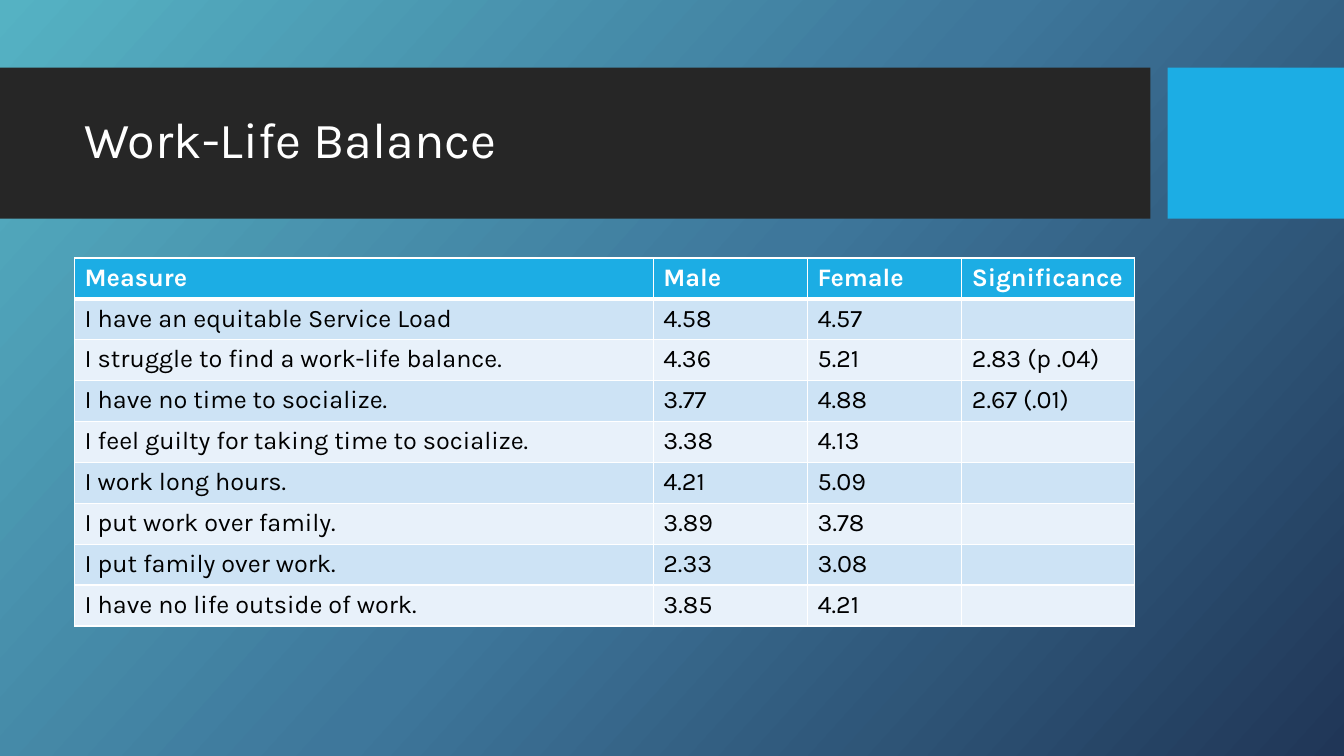
from copy import deepcopy

from lxml import etree
from pptx import Presentation
from pptx.dml.color import RGBColor
from pptx.enum.shapes import MSO_SHAPE
from pptx.enum.text import MSO_ANCHOR
from pptx.oxml.ns import qn
from pptx.util import Inches, Pt

COLORS = {
    "white": "FFFFFF",
    "black": "000000",
    "banner": "262626",
    "accent": "1CADE4",
    "band_dark": "CDE3F5",
    "band_light": "E8F1FA",
}
BACKGROUND_STOPS = [(0, "55B2C3"), (0.5, "3E779B"), (1, "203657")]
FONT = "Karla"
COLUMN_WIDTHS = [5.74, 1.53, 1.53, 1.71]
TABLE_HEIGHT = 3.65
ROWS = [
    ("Measure", "Male", "Female", "Significance"),
    ("I have an equitable Service Load", "4.58", "4.57", ""),
    ("I struggle to find a work-life balance.", "4.36", "5.21", "2.83 (p .04)"),
    ("I have no time to socialize.", "3.77", "4.88", "2.67 (.01)"),
    ("I feel guilty for taking time to socialize.", "3.38", "4.13", ""),
    ("I work long hours.", "4.21", "5.09", ""),
    ("I put work over family.", "3.89", "3.78", ""),
    ("I put family over work.", "2.33", "3.08", ""),
    ("I have no life outside of work.", "3.85", "4.21", ""),
]


def add_run(paragraph, text, size, color, bold=False):
    run = paragraph.add_run()
    run.text = text
    run.font.name = FONT
    run.font.size = Pt(size)
    run.font.bold = bold
    run.font.color.rgb = RGBColor.from_string(COLORS[color])


def add_border(cell, side, width):
    line = etree.SubElement(cell._tc.get_or_add_tcPr(), qn(f"a:ln{side}"), w=str(Pt(width)))
    fill = etree.SubElement(line, qn("a:solidFill"))
    etree.SubElement(fill, qn("a:srgbClr"), val=COLORS["white"])


presentation = Presentation()
presentation.slide_width = Inches(13.33)
presentation.slide_height = Inches(7.5)
slide = presentation.slides.add_slide(presentation.slide_layouts[6])

# Diagonal gradient background
background = slide.background.fill
background.gradient()
background.gradient_angle = 360 - 42
stop_list = slide.element.find(".//" + qn("a:gsLst"))
stop_list.append(deepcopy(stop_list[0]))
for stop, (position, color) in zip(background.gradient_stops, BACKGROUND_STOPS):
    stop.position = position
    stop.color.rgb = RGBColor.from_string(color)

# Banner and accent block
for left, width, color in [(0, 11.41, "banner"), (11.58, 1.75, "accent")]:
    shape = slide.shapes.add_shape(
        MSO_SHAPE.RECTANGLE, Inches(left), Inches(0.67), Inches(width), Inches(1.5))
    shape.shadow.inherit = False
    shape.fill.solid()
    shape.fill.fore_color.rgb = RGBColor.from_string(COLORS[color])
    shape.line.fill.background()

# Title
title = slide.shapes.add_textbox(Inches(0.74), Inches(0.82), Inches(10.51), Inches(1.18))
title.text_frame.word_wrap = True
title.text_frame.vertical_anchor = MSO_ANCHOR.MIDDLE
title_paragraph = title.text_frame.paragraphs[0]
title_paragraph.line_spacing = 0.9
add_run(title_paragraph, "Work-Life Balance", 36, "white")

# Table of survey means
table = slide.shapes.add_table(
    len(ROWS), len(COLUMN_WIDTHS), Inches(0.74), Inches(2.56),
    Inches(sum(COLUMN_WIDTHS)), Inches(TABLE_HEIGHT)).table
for column, width in zip(table.columns, COLUMN_WIDTHS):
    column.width = Inches(width)

for row_index, values in enumerate(ROWS):
    is_header = row_index == 0
    if is_header:
        fill_color = "accent"
    else:
        fill_color = "band_dark" if row_index % 2 else "band_light"
    for column_index, value in enumerate(values):
        cell = table.cell(row_index, column_index)
        for side in "LRTB":
            header_edge = (side == "B" and is_header) or (side == "T" and row_index == 1)
            add_border(cell, side, 3 if header_edge else 1)
        cell.fill.solid()
        cell.fill.fore_color.rgb = RGBColor.from_string(COLORS[fill_color])
        if value:
            add_run(cell.text_frame.paragraphs[0], value, 18,
                    "white" if is_header else "black", is_header)

presentation.save("out.pptx")
